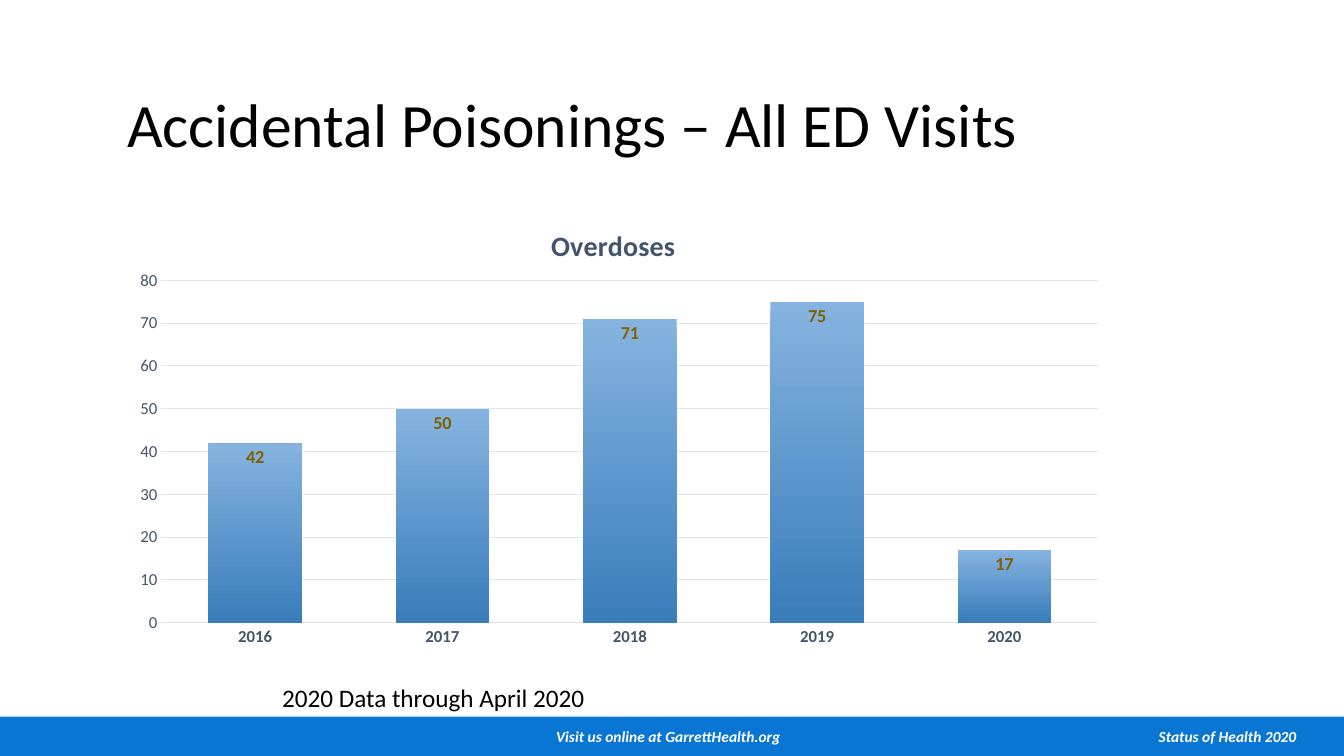
"""Build the slide on accidental poisonings seen in the emergency department."""
from lxml import etree
from pptx import Presentation
from pptx.chart.data import CategoryChartData
from pptx.dml.color import RGBColor
from pptx.enum.chart import XL_CHART_TYPE as ChartType, XL_LABEL_POSITION as LabelPos, XL_TICK_MARK as Tick
from pptx.enum.shapes import MSO_SHAPE as Shape
from pptx.enum.text import MSO_ANCHOR as Anchor, MSO_AUTO_SIZE as AutoSize, PP_ALIGN as Align
from pptx.oxml.ns import qn
from pptx.util import Inches, Pt

BLACK = RGBColor(0x00, 0x00, 0x00)
WHITE = RGBColor(0xFF, 0xFF, 0xFF)
BAND_BLUE = RGBColor(0x0A, 0x76, 0xD3)
SLATE = RGBColor(0x44, 0x54, 0x6A)
GRID = RGBColor(0xE0, 0xE5, 0xEB)
BAR_TOP = RGBColor(0x85, 0xB3, 0xDF)
BAR_BOTTOM = RGBColor(0x39, 0x7D, 0xBB)
OLIVE = RGBColor(0x80, 0x60, 0x00)


def style(font, size, color, bold=False, italic=False):
    font.name = "Calibri"
    font.size = Pt(size)
    font.color.rgb = color
    font.bold = bold
    font.italic = italic


def place(parent, index, **settings):
    for old in parent.findall(qn("c:layout")):
        parent.remove(old)
    layout = etree.Element(qn("c:layout"))
    manual = etree.SubElement(layout, qn("c:manualLayout"))
    for key, value in settings.items():
        etree.SubElement(manual, qn(f"c:{key}")).set("val", str(value))
    parent.insert(index, layout)


deck = Presentation()
deck.slide_width, deck.slide_height = Inches(13.33), Inches(7.5)
slide = deck.slides.add_slide(deck.slide_layouts[5])

heading = slide.shapes.title
heading.left, heading.top = Inches(0.2), Inches(0.5)
heading.width, heading.height = Inches(10.96), Inches(1.53)
heading.text_frame.vertical_anchor = Anchor.MIDDLE
heading_line = heading.text_frame.paragraphs[0]
heading_line.alignment = Align.CENTER
heading_line.line_spacing = 0.9
heading_run = heading_line.add_run()
heading_run.text = "Accidental Poisonings – All ED Visits"
style(heading_run.font, 44, BLACK)

band_height = Inches(0.39)
band = slide.shapes.add_shape(
    Shape.RECTANGLE, 0, deck.slide_height - band_height, deck.slide_width, band_height)
band.shadow.inherit = False
band.fill.solid()
band.fill.fore_color.rgb = BAND_BLUE
band.line.fill.background()
band.text_frame.vertical_anchor = Anchor.MIDDLE
band.text_frame.margin_left = band.text_frame.margin_right = 0
footer = band.text_frame.paragraphs[0]
footer.alignment = Align.LEFT
tabs = etree.SubElement(footer._p.get_or_add_pPr(), qn("a:tabLst"))
for stop, side in ((6.63, "ctr"), (12.86, "r")):
    etree.SubElement(tabs, qn("a:tab"), pos=str(Inches(stop)), algn=side)
for wording in ("\tVisit us online at GarrettHealth.org", "\tStatus of Health 2020"):
    footer_run = footer.add_run()
    footer_run.text = wording
    style(footer_run.font, 11, WHITE, bold=True, italic=True)

visits = CategoryChartData()
visits.categories = ["2016", "2017", "2018", "2019", "2020"]
visits.add_series("Series 1", (42, 50, 71, 75, 17))
chart = slide.shapes.add_chart(
    ChartType.COLUMN_CLUSTERED, Inches(1.21), Inches(1.91), Inches(9.78), Inches(4.59), visits).chart
style(chart.font, 10, BLACK)
chart.has_legend = False
chart.has_title = True
overdoses = chart.chart_title.text_frame.paragraphs[0].add_run()
overdoses.text = "Overdoses"
style(overdoses.font, 20, SLATE, bold=True)
place(chart.chart_title._element, 1, xMode="edge", yMode="edge", x=0.43, y=0.06)
place(chart._chartSpace.chart.plotArea, 0, layoutTarget="inner", xMode="edge", yMode="edge",
      x=0.04, y=0.19, w=0.95, h=0.74)

years, counts = chart.category_axis, chart.value_axis
for axis in (years, counts):
    axis.major_tick_mark = axis.minor_tick_mark = Tick.NONE
    style(axis.tick_labels.font, 12, SLATE, bold=axis is years)
counts.minimum_scale, counts.maximum_scale, counts.major_unit = 0, 80, 10
counts.format.line.fill.background()
counts.has_major_gridlines = True
for rule in (years.format.line, counts.major_gridlines.format.line):
    rule.color.rgb = GRID
    rule.width = Pt(0.75)

plot = chart.plots[0]
plot.gap_width, plot.overlap = 100, -24
plot.vary_by_categories = False
bars = plot.series[0]
bars.format.fill.gradient()
bars.format.fill.gradient_angle = 270
for stop, color in zip(bars.format.fill.gradient_stops, (BAR_TOP, BAR_BOTTOM)):
    stop.color.rgb = color
labels = bars.data_labels
labels.show_value = True
labels.position = LabelPos.INSIDE_END
style(labels.font, 13, OLIVE, bold=True)

note = slide.shapes.add_textbox(Inches(2.7), Inches(6.72), Inches(5.2), Inches(0.71)).text_frame
note.word_wrap = True
note.auto_size = AutoSize.SHAPE_TO_FIT_TEXT
note_run = note.paragraphs[0].add_run()
note_run.text = "2020 Data through April 2020"
style(note_run.font, 18, BLACK)

deck.save("out.pptx")
